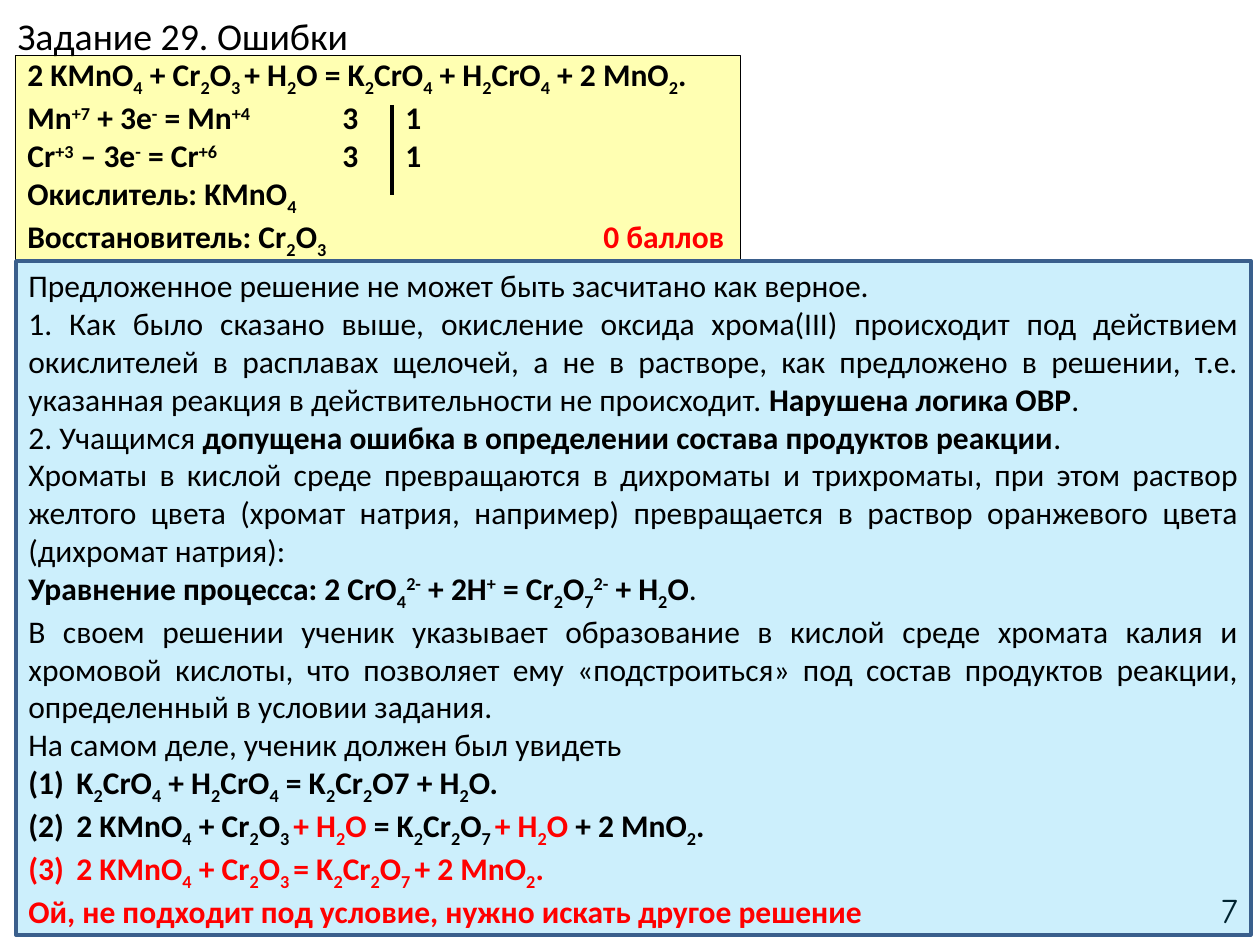
import dataclasses

import lxml.etree
import pptx
import pptx.dml.color
import pptx.enum.shapes
import pptx.enum.text
import pptx.oxml.ns
import pptx.util

PX_PER_INCH = 126
ALIGN = pptx.enum.text.PP_ALIGN
MIDDLE = pptx.enum.text.MSO_ANCHOR.MIDDLE


def rgb(value):
    return pptx.dml.color.RGBColor.from_string(value)


@dataclasses.dataclass(frozen=True)
class Theme:
    font: str = "Calibri"
    number_font: str = "Comic Neue"
    title_size: float = 21.6
    body_size: float = 18
    number_size: float = 20
    ink: str = "000000"
    red: str = "FF0000"
    yellow: str = "FFFF00"
    blue: str = "00B0F0"
    blue_line: str = "3A5F8C"


THEME = Theme()

# Markup: _subscript_, ^superscript^, *bold*, ~red~; "# " starts a numbered item.
SOLUTION = [
    "*2 KMnO_4_ + Cr_2_O_3 _+ H_2_O = K_2_CrO_4_ + H_2_CrO_4_ + 2 MnO_2_.*",
    "*Mn^+7^ + 3e^-^ = Mn^+4\t\t^3\t1*",
    "*Cr^+3^ – 3e^-^ = Cr^+6\t\t^3\t1*",
    "*Окислитель: KMnO_4_*",
    "*Восстановитель: Cr_2_O_3_*",
]
REVIEW = [
    "Предложенное решение не может быть засчитано как верное.",
    "1. Как было сказано выше, окисление оксида хрома(III) происходит под "
    "действием окислителей в расплавах щелочей, а не в растворе, как "
    "предложено в решении, т.е. указанная реакция в действительности не "
    "происходит. *Нарушена логика ОВР*.",
    "2. Учащимся *допущена ошибка в определении состава продуктов реакции*.",
    "Хроматы в кислой среде превращаются в дихроматы и трихроматы, при этом "
    "раствор желтого цвета (хромат натрия, например) превращается в раствор "
    "оранжевого цвета (дихромат натрия):",
    "*Уравнение процесса: 2 CrO_4_^2-^ + 2H^+^ = Cr_2_O_7_^2-^ + H_2_O*.",
    "В своем решении ученик указывает образование в кислой среде хромата "
    "калия и хромовой кислоты, что позволяет ему «подстроиться» под состав "
    "продуктов реакции, определенный в условии задания.",
    "На самом деле, ученик должен был увидеть",
    "# *K_2_CrO_4_ + H_2_CrO_4_ = K_2_Cr_2_O7 + H_2_O.*",
    "# *2 KMnO_4_ + Cr_2_O_3 _~+ H_2_O ~= K_2_Cr_2_O_7 _~+ H_2_O~ + 2 MnO_2_.*",
    "# *~2 KMnO_4_ + Cr_2_O_3 _= K_2_Cr_2_O_7 _+ 2 MnO_2_.~*",
    "*~Ой, не подходит под условие, нужно искать другое решение~*",
]


def px(n):
    return pptx.util.Emu(round(n * 914400 / PX_PER_INCH))


def place(sp, box):
    sp.left, sp.top, sp.width, sp.height = map(px, box)


def add_run(p, text, size, color, font=THEME.font, bold=False, baseline=0):
    r = p.add_run()
    r.text = text
    r.font.name, r.font.size, r.font.bold = font, pptx.util.Pt(size), bold
    r.font.color.rgb = rgb(color)
    if baseline:
        r.font._element.set("baseline", str(baseline * 1000))


def add_marked_runs(p, text):
    """Turn the markup into runs; each mark switches its format on or off."""
    on, start = set(), 0
    for i, ch in enumerate(text + "\n"):
        if ch not in "_^*~\n":
            continue
        if i > start:
            add_run(p, text[start:i], THEME.body_size,
                    THEME.red if "~" in on else THEME.ink, bold="*" in on,
                    baseline=-25 if "_" in on else 30 if "^" in on else 0)
        on ^= {ch}
        start = i + 1


def number_paragraph(p):
    pPr = p._p.get_or_add_pPr()
    pPr.set("marL", str(px(48)))
    pPr.set("indent", str(-px(48)))
    lxml.etree.SubElement(pPr, pptx.oxml.ns.qn("a:buAutoNum"), type="arabicParenBoth")


def add_paragraphs(tf, lines):
    for i, line in enumerate(lines):
        p = tf.add_paragraph() if i else tf.paragraphs[0]
        p.alignment = ALIGN.JUSTIFY
        if line.startswith("# "):
            number_paragraph(p)
        add_marked_runs(p, line.removeprefix("# "))


def add_panel(slide, box, fill, alpha, line, weight, lines):
    sp = slide.shapes.add_shape(pptx.enum.shapes.MSO_SHAPE.RECTANGLE, *map(px, box))
    sp.shadow.inherit = False
    sp.fill.solid()
    sp.fill.fore_color.rgb = rgb(fill)
    color = sp._element.spPr.find(".//" + pptx.oxml.ns.qn("a:srgbClr"))
    lxml.etree.SubElement(color, pptx.oxml.ns.qn("a:alpha"), val=str(alpha * 1000))
    sp.line.color.rgb = rgb(line)
    sp.line.width = pptx.util.Pt(weight)
    tf = sp.text_frame
    tf.word_wrap, tf.vertical_anchor = True, MIDDLE
    add_paragraphs(tf, lines)


def add_label(slide, box):
    sp = slide.shapes.add_textbox(*map(px, box))
    tf = sp.text_frame
    tf.word_wrap = True
    return tf


def add_title(slide, box, text):
    sp = slide.shapes.title
    place(sp, box)
    tf = sp.text_frame
    tf.vertical_anchor = MIDDLE
    p = tf.paragraphs[0]
    p.alignment = ALIGN.LEFT
    add_run(p, text, THEME.title_size, THEME.ink)


def add_page_number(slide, box, text):
    tf = add_label(slide, box)
    tf.vertical_anchor = MIDDLE
    p = tf.paragraphs[0]
    p.alignment = ALIGN.RIGHT
    add_run(p, text, THEME.number_size, THEME.ink, THEME.number_font)


def add_balance_bar(slide, x, top, bottom):
    bar = slide.shapes.add_connector(
        pptx.enum.shapes.MSO_CONNECTOR.STRAIGHT, px(x), px(top), px(x), px(bottom))
    bar.line.color.rgb = rgb(THEME.ink)
    bar.line.width = pptx.util.Pt(2)
    lxml.etree.SubElement(bar._element.spPr, pptx.oxml.ns.qn("a:effectLst"))


def add_solution(slide, box):
    """Student's answer with the electron balance bar and the score."""
    x, y, w, h = box
    add_panel(slide, box, THEME.yellow, 30, THEME.ink, 0.25, SOLUTION)
    add_balance_bar(slide, x + 377, y + 50, y + 140)
    tf = add_label(slide, (x + w - 149, y + h - 49, 149, 50))
    tf.word_wrap = False
    add_run(tf.paragraphs[0], "0 баллов", THEME.body_size, THEME.red, bold=True)


def add_review(slide, box):
    add_panel(slide, box, THEME.blue, 20, THEME.blue_line, 2, REVIEW)


def main():
    prs = pptx.Presentation()
    prs.slide_width, prs.slide_height = px(1260), px(945)
    slide = prs.slides.add_slide(prs.slide_layouts[5])
    add_title(slide, (5, 6, 1230, 58), "Задание 29. Ошибки")
    add_page_number(slide, (956, 885, 294, 50), "7")
    add_solution(slide, (15, 55, 725, 205))
    add_review(slide, (16, 261, 1235, 674))
    prs.save("out.pptx")


if __name__ == "__main__":
    main()
